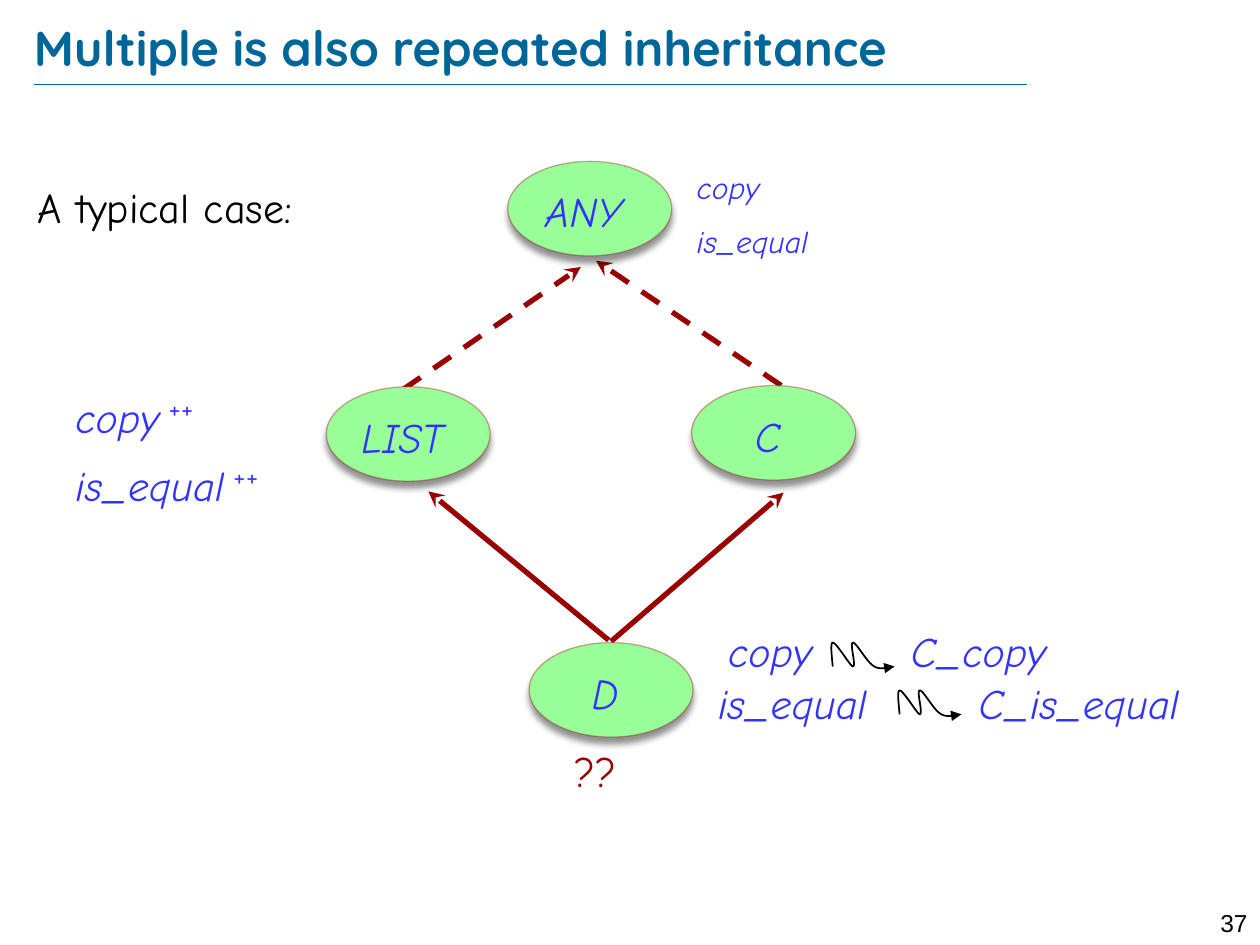
from dataclasses import dataclass

from lxml.etree import SubElement
from pptx import Presentation
from pptx.dml.color import RGBColor
from pptx.enum.dml import MSO_LINE
from pptx.enum.shapes import MSO_CONNECTOR, MSO_SHAPE
from pptx.enum.text import MSO_ANCHOR, PP_ALIGN
from pptx.oxml.ns import qn
from pptx.util import Pt

COLORS = {
    "title": "006699", "text": "000000", "feature": "3333FF",
    "inherit": "990000", "class": "99FF99",
}
CLASS_WIDTH, CLASS_HEIGHT = 93.6, 54
LABEL_WIDTH, LABEL_HEIGHT = 126.7, 36
CURVE_STEPS = 10
# Bezier segments (two controls, end), in points from the squiggle's start
SQUIGGLE = [
    ((-0.7, -7.2), (-1.4, -13.7), (0, -13.7)),
    ((2.2, -13.7), (10.1, 0), (11.5, 0)),
    ((13.7, 0), (9.4, -13.7), (11.5, -13.7)),
    ((13.7, -13.7), (19.4, -2.2), (23.8, 0)),
    ((27.4, 2.2), (33.1, 0), (35.3, 0)),
]


@dataclass
class Words:
    text: str
    size: float = 24
    color: str = "feature"
    italic: bool = True
    bold: bool = False
    font: str = "Comic Neue"
    raised: bool = False


@dataclass
class ClassNode:
    name: str
    left: float
    top: float


@dataclass
class Link:
    start: tuple[float, float]
    end: tuple[float, float]
    dashed: bool = False


@dataclass
class Renaming:
    old: str
    new: str
    left: float
    top: float
    width: float
    tab: float
    squiggle: tuple[float, float]


CLASSES = [
    ClassNode("C", 395.3, 220.3),
    ClassNode("LIST", 186.5, 221),
    ClassNode("D", 302.4, 367.2),
    ClassNode("ANY", 290.2, 92.2),
]
LINKS = [
    Link((230.4, 222.5), (331.9, 152.6), dashed=True),
    Link((446.4, 220.3), (340.6, 149), dashed=True),
    Link((349.2, 366.5), (447.8, 281.5)),
    Link((347.8, 365.8), (244.8, 280.8)),
]
RENAMINGS = [
    Renaming("copy", "C_copy", 409, 354.2, 256.3, 104.4, (475.9, 380.9)),
    Renaming("is_equal", "C_is_equal", 403.2, 383.8, 291.6, 149, (514.1, 408.2)),
]


def rgb(name: str) -> RGBColor:
    return RGBColor.from_string(COLORS[name])


def add_text(slide, left: float, top: float, width: float, height: float,
             paragraphs: list[list[Words]], align=PP_ALIGN.LEFT,
             gap: float = 0, spacing: float = 1.0):
    """Add a wrapped text box; gap is the space between its paragraphs."""
    box = slide.shapes.add_textbox(Pt(left), Pt(top), Pt(width), Pt(height))
    frame = box.text_frame
    frame.word_wrap = True
    for index, pieces in enumerate(paragraphs):
        paragraph = frame.add_paragraph() if index else frame.paragraphs[0]
        paragraph.alignment = align
        paragraph.line_spacing = spacing
        paragraph.space_before = Pt(gap if index else 0)
        for words in pieces:
            run = paragraph.add_run()
            run.text = words.text
            run.font.size = Pt(words.size)
            run.font.name = words.font
            run.font.italic = words.italic
            run.font.bold = words.bold
            run.font.color.rgb = rgb(words.color)
            if words.raised:
                run._r.get_or_add_rPr().set("baseline", "30000")
    return frame


def add_arrowhead(line, kind: str) -> None:
    SubElement(line._get_or_add_ln(), qn("a:tailEnd"), type=kind)


def add_line(slide, start: tuple[float, float], end: tuple[float, float],
             color: str, width: float):
    connector = slide.shapes.add_connector(
        MSO_CONNECTOR.STRAIGHT, *(Pt(value) for value in (*start, *end)))
    connector.line.color.rgb = rgb(color)
    connector.line.width = Pt(width)
    SubElement(connector._element.spPr, qn("a:effectLst"))
    return connector


def add_link(slide, link: Link) -> None:
    connector = add_line(slide, link.start, link.end, "inherit", 3)
    if link.dashed:
        connector.line.dash_style = MSO_LINE.DASH
    add_arrowhead(connector.line, "stealth")


def add_class(slide, node: ClassNode) -> None:
    ellipse = slide.shapes.add_shape(
        MSO_SHAPE.OVAL, Pt(node.left), Pt(node.top), Pt(CLASS_WIDTH), Pt(CLASS_HEIGHT))
    ellipse.fill.solid()
    ellipse.fill.fore_color.rgb = rgb("class")
    ellipse.line.color.rgb = rgb("inherit")
    ellipse.line.width = Pt(0.75)
    properties = ellipse._element.spPr
    outline = properties.find(f"{qn('a:ln')}//{qn('a:srgbClr')}")
    SubElement(outline, qn("a:alpha"), val="34000")
    ellipse.shadow.inherit = False
    shadow = SubElement(properties.find(qn("a:effectLst")), qn("a:outerShdw"),
                        blurRad=str(Pt(4)), dist=str(Pt(4)), dir="5400000",
                        rotWithShape="0")
    shade = SubElement(shadow, qn("a:srgbClr"), val=COLORS["text"])
    SubElement(shade, qn("a:alpha"), val="43000")
    label_left = node.left + (CLASS_WIDTH - LABEL_WIDTH) / 2 - 3.4
    add_text(slide, label_left, node.top + 10.5, LABEL_WIDTH, LABEL_HEIGHT,
             [[Words(node.name)]], PP_ALIGN.CENTER)


def squiggle_points(origin: tuple[float, float]) -> list[tuple[int, int]]:
    """Sample the Bezier segments, shifted to origin."""
    points, start = [], (0, 0)
    for first, second, end in SQUIGGLE:
        for step in range(1, CURVE_STEPS + 1):
            t = step / CURVE_STEPS
            u = 1 - t
            points.append(tuple(
                Pt(o + u**3 * a + 3 * u * u * t * b + 3 * u * t * t * c + t**3 * d)
                for o, a, b, c, d in zip(origin, start, first, second, end)))
        start = end
    return points


def add_renaming(slide, renaming: Renaming) -> None:
    frame = add_text(slide, renaming.left, renaming.top, renaming.width, LABEL_HEIGHT,
                     [[Words(renaming.old), Words("\t"), Words(renaming.new)]])
    tabs = SubElement(frame.paragraphs[0]._p.get_or_add_pPr(), qn("a:tabLst"))
    SubElement(tabs, qn("a:tab"), pos=str(Pt(renaming.tab)), algn="l")
    x, y = renaming.squiggle
    builder = slide.shapes.build_freeform(Pt(x), Pt(y))
    builder.add_line_segments(squiggle_points(renaming.squiggle), close=False)
    squiggle = builder.convert_to_shape()
    squiggle.fill.background()
    squiggle.line.color.rgb = rgb("text")
    squiggle.line.width = Pt(1)
    squiggle.shadow.inherit = False
    add_arrowhead(squiggle.line, "triangle")


def main() -> None:
    deck = Presentation()
    deck.slide_width, deck.slide_height = Pt(720), Pt(540)
    slide = deck.slides.add_slide(deck.slide_layouts[6])
    add_line(slide, (19.4, 48.2), (586.8, 48.2), "title", 0.25)
    add_text(slide, 680.4, 515.5, 39.6, 17.3,
             [[Words("37", 14, "text", italic=False, font="Arial")]], PP_ALIGN.RIGHT)
    title = add_text(slide, 19.4, 9.4, 668.9, 34.6, [[Words(
        "Multiple is also repeated inheritance", 28, "title",
        italic=False, bold=True, font="Quicksand")]])
    title.margin_left = title.margin_right = title.margin_top = title.margin_bottom = 0
    title.vertical_anchor = MSO_ANCHOR.MIDDLE
    add_text(slide, 14.4, 100, 200.2, 61.2,
             [[Words("A typical case:", color="text", italic=False)]])
    for link in LINKS:
        add_link(slide, link)
    features = ("copy", "is_equal")
    add_text(slide, 36, 225.4, 142.6, 63.4,
             [[Words(name), Words(" ", 16), Words("++", 28, italic=False, raised=True)]
              for name in features], gap=15, spacing=0.7)
    add_text(slide, 391, 92.2, 118.8, 61.2,
             [[Words(name, 18)] for name in features], gap=9.5)
    add_text(slide, 321.1, 422.6, 118.8, LABEL_HEIGHT,
             [[Words("??", color="inherit", italic=False)]])
    for renaming in RENAMINGS:
        add_renaming(slide, renaming)
    for node in CLASSES:
        add_class(slide, node)
    deck.save("out.pptx")


if __name__ == "__main__":
    main()
